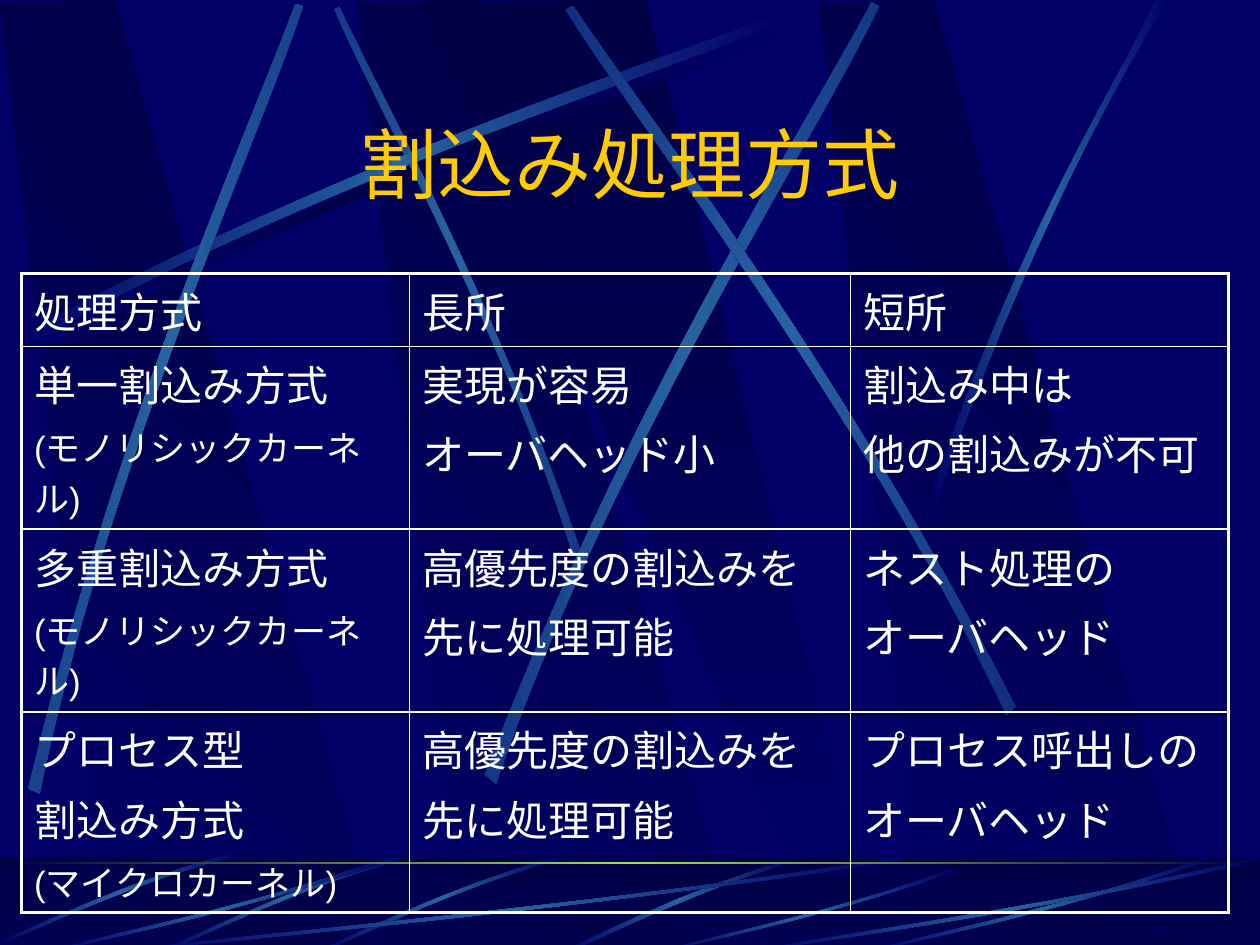
from math import cos, radians, sin

from lxml.etree import SubElement
from pptx import Presentation
from pptx.dml.color import RGBColor
from pptx.enum.shapes import MSO_SHAPE
from pptx.enum.text import MSO_ANCHOR, MSO_AUTO_SIZE, PP_ALIGN
from pptx.oxml.ns import qn
from pptx.util import Emu, Pt

EMU_PER_PX = 9144  # 100 px to the inch
COLORS = {"navy": "000066", "dark": "000044", "beam": "2663A0",
          "horizon": "9CE157", "title": "FFCC00", "white": "FFFFFF"}
GLOW = ("navy", "beam", "navy")

# Each beam: edge curve, then the returning edge curve (start, two controls, end)
LONG_BEAM = [(14, 267), (278, 125), (518, 51), (620, 10),
             (623, 16), (522, 61), (248, 143), (17, 277)]
UPPER_BEAMS = [
    (45, [(460, 436), (391, 234), (302, 77), (269, 5),
          (265, 7), (295, 79), (398, 258), (454, 439)]),
    (0, LONG_BEAM),
    (311.7, [(23, 625), (93, 334), (197, 105), (235, 2),
             (241, 4), (207, 109), (86, 368), (32, 629)]),
    (321.6, [(385, 614), (498, 320), (638, 102), (692, 1),
             (698, 4), (649, 108), (486, 355), (394, 621)]),
    (34.7, [(806, 560), (670, 293), (516, 95), (455, 4),
            (449, 7), (507, 101), (685, 325), (799, 567)]),
    (0, [(738, 394), (814, 173), (888, 66), (917, 0),
         (927, 0), (836, 145), (769, 322), (744, 397)]),
]
FLOOR_BEAM = [(627, 682), (537, 709), (477, 742), (448, 754),
              (453, 755), (490, 738), (571, 700), (628, 685)]
SHORT_BEAM = [(442, 680), (355, 705), (287, 740), (256, 753),
              (257, 755), (288, 743), (365, 703), (444, 683)]
LEFT_BEAM = [(186, 677), (99, 700), (33, 734), (2, 746),
             (3, 748), (34, 737), (110, 698), (188, 680)]
SWEEP = [(400, 3), (227, 43), (69, 64), (2, 75),
         (0, 74), (66, 61), (246, 38), (398, 0)]
SWEEP_BOXES = [(100, 680, 617, 75), (42, 680, 267, 75), (527, 689, 231, 66),
               (692, 680, 267, 75), (600, 680, 400, 75)]
PILLAR = [(86, 752), (302, 752), (91, 0), (0, 2)]
WIDE_PILLAR = [(0, 1), (325, 751), (361, 751), (180, 0)]

# Each cell: its lines, as (text, size in points)
NOTE, BODY = 20, 24
TABLE_ROWS = [
    [[("処理方式", BODY)], [("長所", BODY)], [("短所", BODY)]],
    [[("単一割込み方式", BODY), ("(モノリシックカーネル)", NOTE)],
     [("実現が容易", BODY), ("オーバヘッド小", BODY)],
     [("割込み中は", BODY), ("他の割込みが不可", BODY)]],
    [[("多重割込み方式", BODY), ("(モノリシックカーネル)", NOTE)],
     [("高優先度の割込みを", BODY), ("先に処理可能", BODY)],
     [("ネスト処理の", BODY), ("オーバヘッド", BODY)]],
    [[("プロセス型", BODY), ("割込み方式", BODY), ("(マイクロカーネル)", NOTE)],
     [("高優先度の割込みを", BODY), ("先に処理可能", BODY)],
     [("プロセス呼出しの", BODY), ("オーバヘッド", BODY)]],
]


def px(*lengths):
    return [Emu(round(length * EMU_PER_PX)) for length in lengths]


def shift(points, dx, dy):
    return [(x + dx, y + dy) for x, y in points]


def fit(points, left, top, width, height):
    """Stretch points so that their bounds fill the box."""
    xs, ys = zip(*points)
    across, down = width / (max(xs) - min(xs)), height / (max(ys) - min(ys))
    return [(left + (x - min(xs)) * across, top + (y - min(ys)) * down)
            for x, y in points]


def rotate_about_middle(points, degrees):
    xs, ys = zip(*points)
    mid_x, mid_y = (min(xs) + max(xs)) / 2, (min(ys) + max(ys)) / 2
    c, s = cos(radians(degrees)), sin(radians(degrees))
    return [(mid_x + (x - mid_x) * c - (y - mid_y) * s,
             mid_y + (x - mid_x) * s + (y - mid_y) * c) for x, y in points]


def bend(shape):
    """Turn the two long edges of an eight-point outline into Bezier curves."""
    lines = list(shape.element.spPr.iter(qn("a:lnTo")))
    for edge in (lines[0:3], lines[4:7]):
        bezier = SubElement(edge[0].getparent(), qn("a:cubicBezTo"))
        edge[0].addprevious(bezier)
        for line in edge:
            bezier.append(line[0])
            line.getparent().remove(line)


def write(paragraph, text, size, font, color, align=PP_ALIGN.LEFT, before=0):
    paragraph.alignment = align
    paragraph.space_before = Pt(before)
    run = paragraph.add_run()
    run.text = text
    run.font.size = Pt(size)
    run.font.name = font
    run.font.color.rgb = RGBColor.from_string(COLORS[color])


class Deck:
    """Holds the style and the current slide."""

    def __init__(self, title_font, body_font):
        self.title_font, self.body_font = title_font, body_font
        self.presentation = Presentation()
        self.presentation.slide_width, self.presentation.slide_height = px(1000, 750)

    def add_slide(self, background):
        self.slide = self.presentation.slides.add_slide(self.presentation.slide_layouts[5])
        self.slide.background.fill.solid()
        self.slide.background.fill.fore_color.rgb = RGBColor.from_string(COLORS[background])

    def paint(self, shape, colors, angle=0, opacity=None):
        """Fill with one colour or an even gradient, without line or shadow."""
        shape.shadow.inherit = False
        shape.line.fill.background()
        if len(colors) == 1:
            shape.fill.solid()
            shape.fill.fore_color.rgb = RGBColor.from_string(COLORS[colors[0]])
            if opacity is not None:
                rgb = next(shape.element.spPr.iter(qn("a:srgbClr")))
                SubElement(rgb, qn("a:alpha"), val=str(opacity * 1000))
            return
        shape.fill.gradient()
        shape.fill.gradient_angle = angle
        stops = next(shape.element.spPr.iter(qn("a:gsLst")))
        for stop in list(stops):
            stops.remove(stop)
        for index, color in enumerate(colors):
            position = 100000 * index // (len(colors) - 1)
            stop = SubElement(stops, qn("a:gs"), pos=str(position))
            SubElement(stop, qn("a:srgbClr"), val=COLORS[color])

    def band(self, box, colors, **fill):
        self.paint(self.slide.shapes.add_shape(MSO_SHAPE.RECTANGLE, *px(*box)), colors, **fill)

    def outline(self, points, colors, angle=0, rotation=0):
        """Draw a closed outline whose points are given as they stand after rotation."""
        start, *rest = [px(*point) for point in rotate_about_middle(points, -rotation)]
        builder = self.slide.shapes.build_freeform(*start, scale=1.0)
        builder.add_line_segments(rest, close=True)
        shape = builder.convert_to_shape()
        shape.rotation = rotation
        self.paint(shape, colors, angle)
        return shape

    def beam(self, controls, rotation=0, colors=GLOW):
        """Draw a curved beam; its gradient stays level when the beam is turned."""
        bend(self.outline(controls, colors, angle=rotation, rotation=rotation))

    def pillars(self, top, height):
        for left in (283, 0, 650):
            self.outline(fit(PILLAR, left, top, 302, height), ("navy", "dark"), angle=45)
        self.outline(fit(WIDE_PILLAR, 333, top, 361, height), ("dark", "navy"), angle=270)

    def title(self, text, box):
        title = self.slide.shapes.title
        title.left, title.top, title.width, title.height = px(*box)
        title.element.getparent().append(title.element)  # bring to front
        frame = title.text_frame
        frame.word_wrap = True
        frame.vertical_anchor = MSO_ANCHOR.MIDDLE
        frame.auto_size = MSO_AUTO_SIZE.SHAPE_TO_FIT_TEXT
        write(frame.paragraphs[0], text, size=44, font=self.title_font,
              color="title", align=PP_ALIGN.CENTER)

    def border(self, cell, side, width):
        line = SubElement(cell._tc.get_or_add_tcPr(), qn("a:" + side), w=str(Pt(width)))
        SubElement(SubElement(line, qn("a:solidFill")), qn("a:srgbClr"), val=COLORS["white"])

    def table(self, rows, left, top, widths, heights):
        table = self.slide.shapes.add_table(
            len(rows), len(widths), *px(left, top, sum(widths), sum(heights))).table
        table.first_row = table.horz_banding = False
        for column, width in zip(table.columns, px(*widths)):
            column.width = width
        for row, height in zip(table.rows, px(*heights)):
            row.height = height
        for r, row in enumerate(rows):
            for c, lines in enumerate(row):
                cell = table.cell(r, c)
                outer_sides = {"lnL": c == 0, "lnR": c == len(widths) - 1,
                               "lnT": r == 0, "lnB": r == len(rows) - 1}
                for side, is_outer in outer_sides.items():
                    self.border(cell, side, 2.25 if is_outer else 1)
                cell.fill.background()
                for index, (text, size) in enumerate(lines):
                    frame = cell.text_frame
                    paragraph = frame.add_paragraph() if index else frame.paragraphs[0]
                    write(paragraph, text, size=size, font=self.body_font, color="white",
                          before=size * 0.2 if index else 0)


def main():
    deck = Deck(title_font="Times New Roman", body_font="Arial")
    deck.add_slide("navy")
    deck.pillars(0, 752)
    deck.beam(shift(LONG_BEAM, 6, 8), colors=("navy", "dark", "navy"))
    for rotation, controls in UPPER_BEAMS:
        deck.beam(controls, rotation)

    floor = (0, 680, 1000, 75)
    deck.band(floor, ("dark", "navy"), angle=270)
    deck.pillars(688, 66)
    deck.band(floor, ("dark",), opacity=50)
    deck.beam(FLOOR_BEAM)
    for controls in (SHORT_BEAM, shift(SHORT_BEAM, -125, 0), LEFT_BEAM):
        deck.beam(controls, rotation=315)
    for box in SWEEP_BOXES:
        deck.beam(fit(SWEEP, *box))
    deck.band((0, 684, 1000, 2), ("dark", "horizon", "dark"))

    deck.title("割込み処理方式", (75, 88, 850, 83))
    deck.table(TABLE_ROWS, 17, 217, widths=(308, 350, 300), heights=(58, 145, 145, 159))
    deck.presentation.save("out.pptx")


if __name__ == "__main__":
    main()
